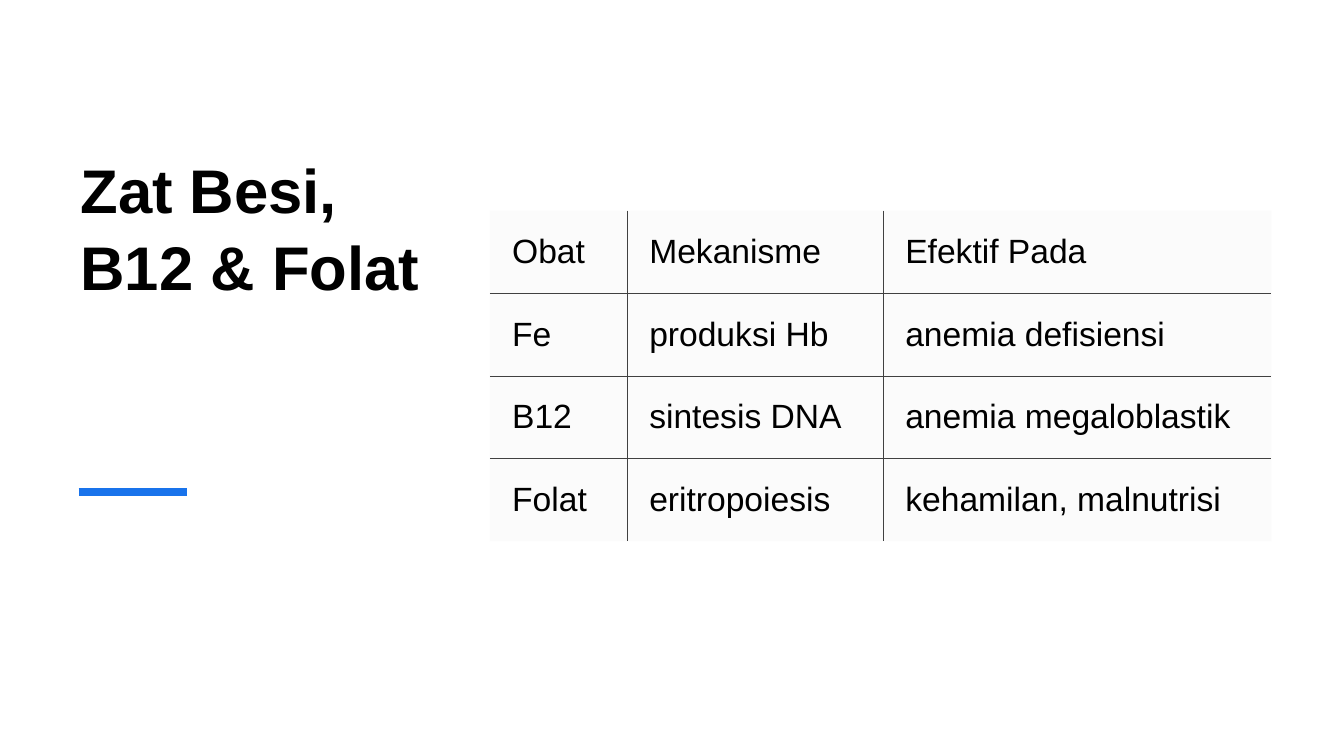
from dataclasses import dataclass

import pptx
import pptx.dml.color
import pptx.enum.shapes
import pptx.enum.text
import pptx.oxml
import pptx.oxml.ns
import pptx.util
from pptx.util import Inches


@dataclass(frozen=True)
class Theme:
    font: str = "Arial"
    text: str = "000000"
    accent: str = "1973EB"
    cell: str = "F2F2F2"
    cell_opacity: int = 30
    border: str = "404040"
    title_size: int = 44
    table_size: int = 24
    accent_width: float = 6
    border_width: float = 0.5


THEME = Theme()

DRUGS = [
    ["Obat", "Mekanisme", "Efektif Pada"],
    ["Fe", "produksi Hb", "anemia defisiensi"],
    ["B12", "sintesis DNA", "anemia megaloblastik"],
    ["Folat", "eritropoiesis", "kehamilan, malnutrisi"],
]
COLUMN_WIDTHS = [1.36, 2.54, 3.85]
ROW_HEIGHT = 0.82


def rgb(color):
    return pptx.dml.color.RGBColor.from_string(color)


def style_paragraph(paragraph, size, bold=False):
    paragraph.font.name = THEME.font
    paragraph.font.size = pptx.util.Pt(size)
    paragraph.font.bold = bold
    paragraph.font.color.rgb = rgb(THEME.text)


def add_title(slide, text, left, top, width, height):
    shape = slide.shapes.add_textbox(
        Inches(left), Inches(top), Inches(width), Inches(height))
    shape.text_frame.word_wrap = True
    paragraph = shape.text_frame.paragraphs[0]
    paragraph.text = text
    paragraph.line_spacing = 1.05
    style_paragraph(paragraph, THEME.title_size, bold=True)


def add_accent_line(slide, left, right, y):
    line = slide.shapes.add_connector(
        pptx.enum.shapes.MSO_CONNECTOR.STRAIGHT,
        Inches(left), Inches(y), Inches(right), Inches(y))
    line.line.color.rgb = rgb(THEME.accent)
    line.line.width = pptx.util.Pt(THEME.accent_width)
    line._element.spPr.append(pptx.oxml.parse_xml(
        f"<a:effectLst {pptx.oxml.ns.nsdecls('a')}/>"))


def set_cell_borders(cell, visible_sides):
    """Draw the given sides (L, R, T, B) and clear the others."""
    properties = cell._tc.get_or_add_tcPr()
    width = pptx.util.Pt(THEME.border_width)
    for position, side in enumerate("LRTB"):
        paint = "<a:noFill/>"
        if side in visible_sides:
            paint = f'<a:solidFill><a:srgbClr val="{THEME.border}"/></a:solidFill>'
        properties.insert(position, pptx.oxml.parse_xml(
            f'<a:ln{side} {pptx.oxml.ns.nsdecls("a")} w="{width}">{paint}</a:ln{side}>'))


def fill_cell(cell):
    cell.fill.solid()
    cell.fill.fore_color.rgb = rgb(THEME.cell)
    color = cell._tc.tcPr.find(".//" + pptx.oxml.ns.qn("a:srgbClr"))
    color.append(pptx.oxml.parse_xml(
        f'<a:alpha {pptx.oxml.ns.nsdecls("a")} val="{THEME.cell_opacity * 1000}"/>'))


def style_cell(cell, text, visible_sides):
    cell.text = text
    cell.vertical_anchor = pptx.enum.text.MSO_ANCHOR.MIDDLE
    cell.margin_left = Inches(0.22)
    cell.margin_right = cell.margin_top = cell.margin_bottom = Inches(0.17)
    style_paragraph(cell.text_frame.paragraphs[0], THEME.table_size)
    fill_cell(cell)
    set_cell_borders(cell, visible_sides)


def add_inner_grid_table(slide, rows, left, top):
    last_row, last_column = len(rows) - 1, len(COLUMN_WIDTHS) - 1
    table = slide.shapes.add_table(
        len(rows), len(COLUMN_WIDTHS), Inches(left), Inches(top),
        Inches(sum(COLUMN_WIDTHS)), Inches(ROW_HEIGHT * len(rows))).table
    table.first_row = table.horz_banding = False
    for column, width in zip(table.columns, COLUMN_WIDTHS):
        column.width = Inches(width)
    for row_index, texts in enumerate(rows):
        table.rows[row_index].height = Inches(ROW_HEIGHT)
        for column_index, text in enumerate(texts):
            # Only sides shared with a neighbouring cell are drawn
            inner = {"L": column_index > 0, "R": column_index < last_column,
                     "T": row_index > 0, "B": row_index < last_row}
            sides = [side for side, shared in inner.items() if shared]
            style_cell(table.cell(row_index, column_index), text, sides)


def main():
    presentation = pptx.Presentation()
    presentation.slide_width = Inches(13.33)
    presentation.slide_height = Inches(7.5)
    slide = presentation.slides.add_slide(presentation.slide_layouts[6])

    # Heading and accent
    add_title(slide, "Zat Besi, B12 & Folat", 0.7, 1.42, 3.6, 3.03)
    add_accent_line(slide, 0.78, 1.85, 4.88)

    # Drug table
    add_inner_grid_table(slide, DRUGS, 4.86, 2.09)

    presentation.save("out.pptx")


if __name__ == "__main__":
    main()
